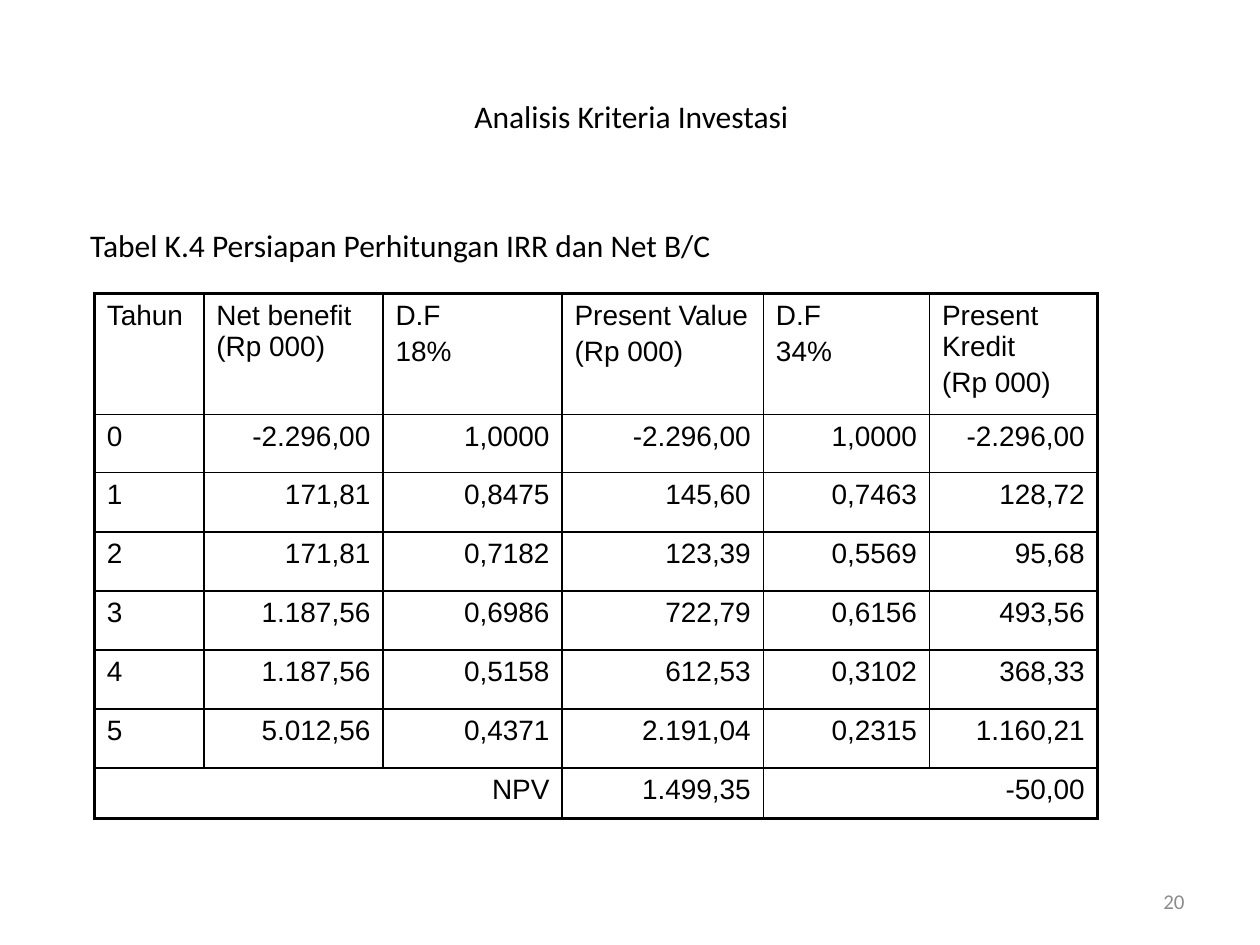
from dataclasses import dataclass

from lxml.etree import SubElement
from pptx import Presentation
from pptx.dml.color import RGBColor
from pptx.enum.text import MSO_ANCHOR, PP_ALIGN
from pptx.oxml.ns import qn
from pptx.util import Cm, Pt

COLORS = {"text": "000000", "border": "000000", "number": "8C8C8C"}
THICK = Pt(2.25)
THIN = Pt(1)

COLUMN_WIDTHS = [2.21, 3.61, 3.61, 4.06, 3.35, 3.38]
ROW_HEIGHTS = [2.44, 1.17] + [1.19] * 5 + [1.02]
HEADERS = [
    ["Tahun"],
    ["Net benefit (Rp 000)"],
    ["D.F", "18%"],
    ["Present Value", "(Rp 000)"],
    ["D.F", "34%"],
    ["Present Kredit", "(Rp 000)"],
]
YEARS = [
    ["0", "-2.296,00", "1,0000", "-2.296,00", "1,0000", "-2.296,00"],
    ["1", "171,81", "0,8475", "145,60", "0,7463", "128,72"],
    ["2", "171,81", "0,7182", "123,39", "0,5569", "95,68"],
    ["3", "1.187,56", "0,6986", "722,79", "0,6156", "493,56"],
    ["4", "1.187,56", "0,5158", "612,53", "0,3102", "368,33"],
    ["5", "5.012,56", "0,4371", "2.191,04", "0,2315", "1.160,21"],
]


@dataclass
class TextStyle:
    font: str
    size: float
    color: str = "text"
    align: PP_ALIGN = PP_ALIGN.LEFT


@dataclass
class TextBlock:
    text: str
    left: float
    top: float
    width: float
    height: float
    style: TextStyle
    anchor: MSO_ANCHOR = MSO_ANCHOR.MIDDLE
    inset_left: float = 0.25
    inset_top: float = 0.13


def write_lines(text_frame, lines: list[str], style: TextStyle) -> None:
    for index, line in enumerate(lines):
        paragraph = text_frame.add_paragraph() if index else text_frame.paragraphs[0]
        paragraph.alignment = style.align
        if index:
            paragraph.space_before = Pt(style.size * 0.2)
        run = paragraph.add_run()
        run.text = line
        run.font.name = style.font
        run.font.size = Pt(style.size)
        run.font.color.rgb = RGBColor.from_string(COLORS[style.color])


def place_text(shape, block: TextBlock) -> None:
    shape.left, shape.top = Cm(block.left), Cm(block.top)
    shape.width, shape.height = Cm(block.width), Cm(block.height)
    text_frame = shape.text_frame
    text_frame.word_wrap = True
    text_frame.vertical_anchor = block.anchor
    text_frame.margin_left = Cm(block.inset_left)
    text_frame.margin_top = Cm(block.inset_top)
    write_lines(text_frame, [block.text], block.style)


def add_text(slide, block: TextBlock) -> None:
    place_text(slide.shapes.add_textbox(0, 0, 0, 0), block)


def set_borders(cell, widths: dict[str, int]) -> None:
    properties = cell._tc.get_or_add_tcPr()
    for side, width in widths.items():
        line = SubElement(properties, qn(f"a:ln{side}"), w=str(int(width)))
        fill = SubElement(line, qn("a:solidFill"))
        SubElement(fill, qn("a:srgbClr"), val=COLORS["border"])


def format_table(table) -> None:
    last_row, last_column = len(ROW_HEIGHTS) - 1, len(COLUMN_WIDTHS) - 1
    for row in range(last_row + 1):
        for column in range(last_column + 1):
            cell = table.cell(row, column)
            end_column = column + cell.span_width - 1
            set_borders(cell, {
                "L": THICK if column == 0 else THIN,
                "R": THICK if end_column == last_column else THIN,
                "T": THICK if row == 0 else THIN,
                "B": THICK if row == last_row else THIN,
            })
            cell.fill.background()


def add_investment_table(slide) -> None:
    table = slide.shapes.add_table(
        len(ROW_HEIGHTS), len(COLUMN_WIDTHS), Cm(1.9), Cm(5.92),
        Cm(sum(COLUMN_WIDTHS)), Cm(sum(ROW_HEIGHTS))).table
    table.first_row = False
    table.horz_banding = False
    for column, width in zip(table.columns, COLUMN_WIDTHS):
        column.width = Cm(width)
    for row, height in zip(table.rows, ROW_HEIGHTS):
        row.height = Cm(height)

    label = TextStyle("Arial", 16)
    figure = TextStyle("Arial", 16, align=PP_ALIGN.RIGHT)
    for column, lines in enumerate(HEADERS):
        write_lines(table.cell(0, column).text_frame, lines, label)
    for row, values in enumerate(YEARS, start=1):
        for column, value in enumerate(values):
            style = figure if column else label
            write_lines(table.cell(row, column).text_frame, [value], style)

    total = len(ROW_HEIGHTS) - 1
    table.cell(total, 0).merge(table.cell(total, 2))
    table.cell(total, 4).merge(table.cell(total, 5))
    for column, value in {0: "NPV", 3: "1.499,35", 4: "-50,00"}.items():
        write_lines(table.cell(total, column).text_frame, [value], figure)
    format_table(table)


def main() -> None:
    presentation = Presentation()
    presentation.slide_width = Cm(25.4)
    presentation.slide_height = Cm(19.05)
    slide = presentation.slides.add_slide(presentation.slide_layouts[5])

    place_text(slide.shapes.title, TextBlock(
        "Analisis Kriteria Investasi", 1.3, 0.74, 22.86, 3.18,
        TextStyle("Calibri", 18, align=PP_ALIGN.CENTER)))
    add_text(slide, TextBlock(
        "Tabel K.4 Persiapan Perhitungan IRR dan Net B/C", 1.27, 3.53, 23.04, 13.49,
        TextStyle("Calibri", 18), MSO_ANCHOR.TOP, inset_left=0.55, inset_top=1.02))
    add_investment_table(slide)
    add_text(slide, TextBlock(
        "20", 18.21, 17.65, 5.92, 1.02,
        TextStyle("Calibri", 12, "number", PP_ALIGN.RIGHT)))

    presentation.save("out.pptx")


if __name__ == "__main__":
    main()
